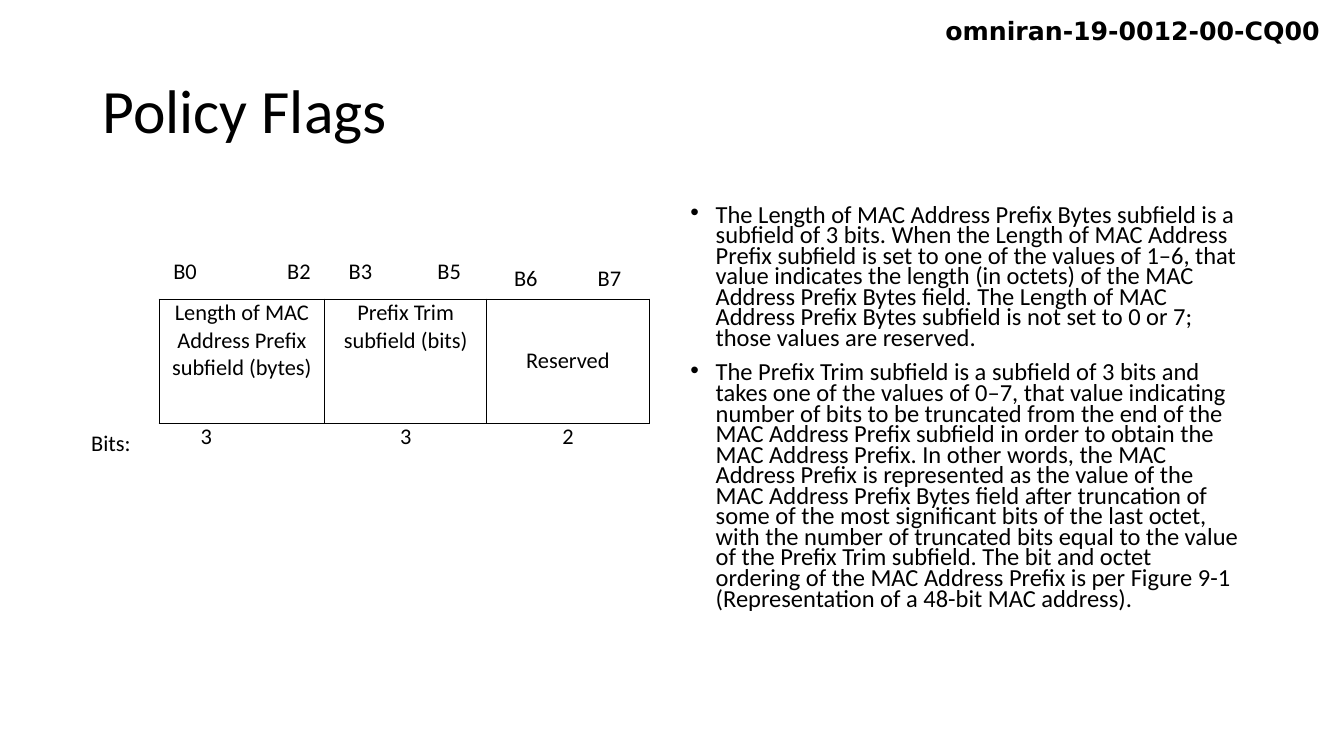
from lxml.etree import SubElement
from pptx import Presentation
from pptx.dml.color import RGBColor
from pptx.enum.text import MSO_ANCHOR as Anchor, MSO_AUTO_SIZE as AutoSize, PP_ALIGN as Align
from pptx.oxml.ns import qn
from pptx.util import Inches, Pt

COLORS = {"ink": "000000", "paper": "FFFFFF"}
PLAIN_TABLE = "{2D5ABB26-0587-4C30-8999-92F81FD0307C}"
COLUMNS, ROWS = 160, 90  # grid over the whole slide

POLICY_NOTES = [
    "The Length of MAC Address Prefix Bytes subfield is a subfield of 3 bits. "
    "When the Length of MAC Address Prefix subfield is set to one of the values "
    "of 1–6, that value indicates the length (in octets) of the MAC Address "
    "Prefix Bytes field. The Length of MAC Address Prefix Bytes subfield is not "
    "set to 0 or 7; those values are reserved.",
    "The Prefix Trim subfield is a subfield of 3 bits and takes one of the values "
    "of 0–7, that value indicating number of bits to be truncated from the end of "
    "the MAC Address Prefix subfield in order to obtain the MAC Address Prefix. In "
    "other words, the MAC Address Prefix is represented as the value of the MAC "
    "Address Prefix Bytes field after truncation of some of the most significant "
    "bits of the last octet, with the number of truncated bits equal to the value "
    "of the Prefix Trim subfield. The bit and octet ordering of the MAC Address "
    "Prefix is per Figure 9-1 (Representation of a 48-bit MAC address).",
]


class SlideBuilder:
    def __init__(self, deck, font="Calibri"):
        self.column = deck.slide_width / COLUMNS
        self.row = deck.slide_height / ROWS
        self.font = font
        self.page = deck.slides.add_slide(deck.slide_layouts[1])
        self.page.background.fill.solid()
        self.page.background.fill.fore_color.rgb = RGBColor.from_string(COLORS["paper"])

    def across(self, columns):
        return round(columns * self.column)

    def down(self, rows):
        return round(rows * self.row)

    def area(self, left, top, width, height):
        return self.across(left), self.down(top), self.across(width), self.down(height)

    def style(self, para, size, font=None, bold=False, align=Align.LEFT):
        para.alignment = align
        para.font.name = font or self.font
        para.font.size = Pt(size)
        para.font.bold = bold
        para.font.color.rgb = RGBColor.from_string(COLORS["ink"])

    def placeholder(self, index, area):
        box = self.page.placeholders[index]
        box.left, box.top, box.width, box.height = self.area(*area)
        box.text_frame.auto_size = AutoSize.NONE
        return box.text_frame

    def title(self, text, area):
        frame = self.placeholder(0, area)
        frame.text = text
        frame.vertical_anchor = Anchor.MIDDLE
        para = frame.paragraphs[0]
        para.line_spacing = 0.9
        self.style(para, 44)

    def bullets(self, texts, area):
        frame = self.placeholder(1, area)
        frame.text = "\n".join(texts)
        for para in frame.paragraphs:
            self.style(para, 17.5)
            para.line_spacing = 0.7
            para.space_before = Pt(10)
            props = para._p.get_or_add_pPr()
            props.set("marL", str(Inches(0.25)))
            props.set("indent", str(-Inches(0.25)))

    def label(self, text, area):
        box = self.page.shapes.add_textbox(*self.area(*area))
        box.text_frame.text = text
        box.text_frame.word_wrap = False
        self.style(box.text_frame.paragraphs[0], 18, font="DejaVu Sans", bold=True)

    def table(self, left, top, widths, heights):
        area = self.area(left, top, sum(widths), sum(heights))
        table = self.page.shapes.add_table(len(heights), len(widths), *area).table
        table.first_row = table.horz_banding = False
        table._tbl.tblPr.find(qn("a:tableStyleId")).text = PLAIN_TABLE
        for column, width in zip(table.columns, widths):
            column.width = self.across(width)
        for row, height in zip(table.rows, heights):
            row.height = self.down(height)
        for cell in table.iter_cells():
            cell.margin_left = cell.margin_right = self.across(0.84)
            cell.margin_top = cell.margin_bottom = 0
            self.style(cell.text_frame.paragraphs[0], 16)
        return table

    def cell(self, cell, text, align=Align.CENTER, anchor=Anchor.TOP, space=0,
             indent=0.84, tab=None):
        cell.text_frame.text = text
        cell.vertical_anchor = anchor
        cell.margin_left = self.across(indent)
        para = cell.text_frame.paragraphs[0]
        self.style(para, 16, align=align)
        para.space_before = para.space_after = Pt(space)
        if tab:
            stops = SubElement(para._p.get_or_add_pPr(), qn("a:tabLst"))
            SubElement(stops, qn("a:tab"), pos=str(self.across(tab)), algn="l")

    def frame_cell(self, cell):
        props = cell._tc.get_or_add_tcPr()
        for edge in ("L", "R", "T", "B"):
            line = SubElement(props, qn("a:ln" + edge), w=str(Pt(1)))
            fill = SubElement(line, qn("a:solidFill"))
            SubElement(fill, qn("a:srgbClr"), val=COLORS["ink"])
        cell.fill.background()


def add_bit_layout(builder):
    table = builder.table(5.16, 30.72, [13.8, 2.28, 17.4, 19.32, 19.32],
                          [4.92, 14.76, 4.92])
    for row, column in ((0, 1), (1, 1), (2, 0)):
        table.cell(row, column).merge(table.cell(row, column + 1))

    # Bit numbers, each pair set apart by a tab stop
    bit_pairs = [(1, "B0\tB2", 1.68, 13.56, Anchor.TOP),
                 (3, "B3\tB5", 2.88, 10.56, Anchor.TOP),
                 (4, "B6\tB7", 3.24, 9.96, Anchor.MIDDLE)]
    for column, text, indent, tab, anchor in bit_pairs:
        builder.cell(table.cell(0, column), text, Align.LEFT, anchor, 2, indent, tab)

    # Framed subfields
    subfields = [(1, "Length of MAC Address Prefix subfield (bytes)", Anchor.TOP),
                 (3, "Prefix Trim subfield (bits)", Anchor.TOP),
                 (4, "Reserved", Anchor.MIDDLE)]
    for column, text, anchor in subfields:
        builder.cell(table.cell(1, column), text, anchor=anchor, space=2)
    for column in range(1, 5):
        builder.frame_cell(table.cell(1, column))

    # Subfield widths in bits
    builder.cell(table.cell(2, 0), "Bits:", anchor=Anchor.MIDDLE)
    builder.cell(table.cell(2, 2), "3", Align.LEFT, indent=2.64)
    builder.cell(table.cell(2, 3), "3")
    builder.cell(table.cell(2, 4), "2")


def main():
    deck = Presentation()
    deck.slide_width, deck.slide_height = Inches(13.33), Inches(7.5)
    builder = SlideBuilder(deck)
    builder.label("omniran-19-0012-00-CQ00", (111.36, 1.2, 48.6, 4.8))
    builder.title("Policy Flags", (11, 4.8, 138, 17.4))
    add_bit_layout(builder)
    builder.bullets(POLICY_NOTES, (81, 24, 68, 57.1))
    deck.save("out.pptx")


if __name__ == "__main__":
    main()
